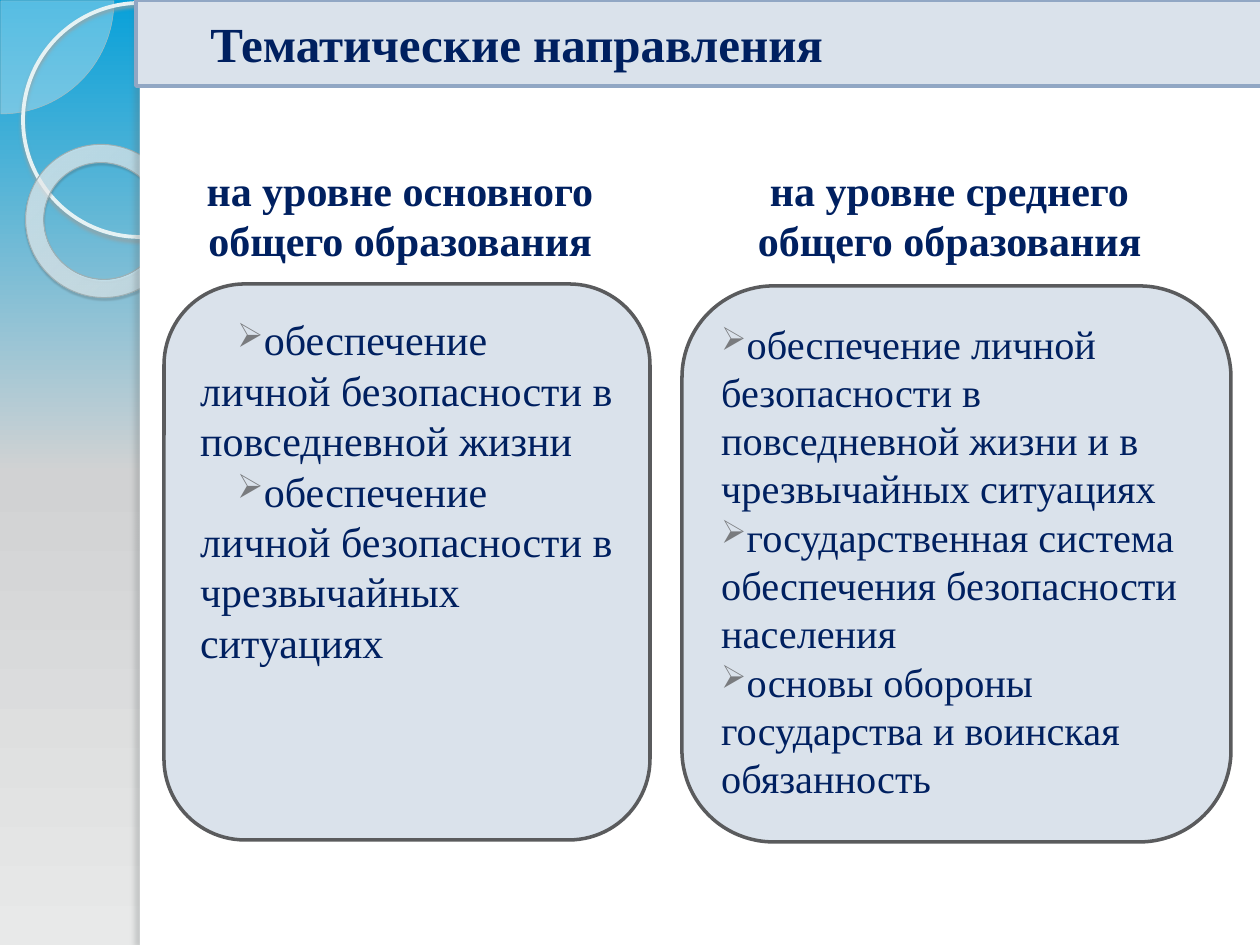
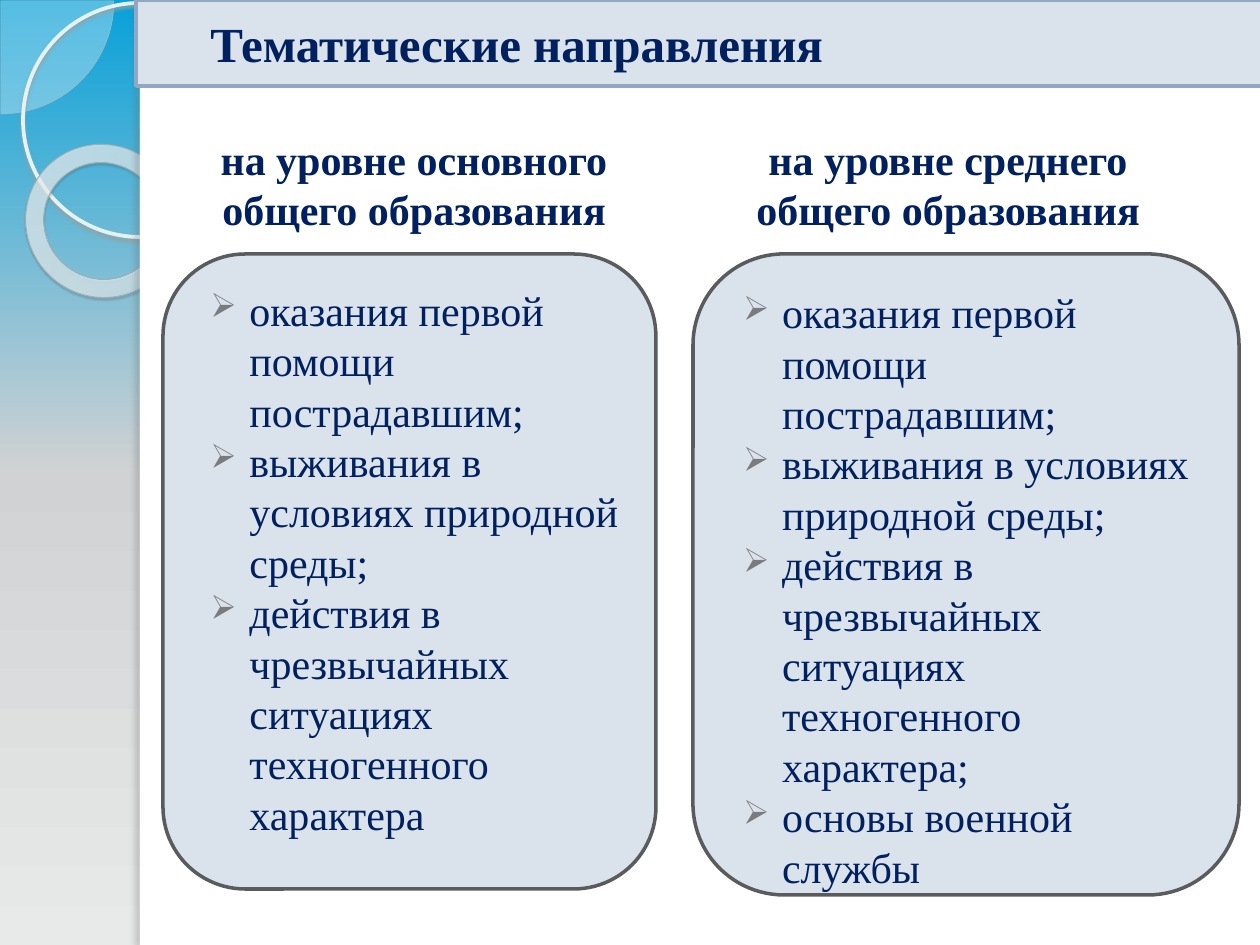
"""Build two slides on the thematic areas of safety teaching, by school level."""
from lxml.etree import SubElement
from pptx import Presentation
from pptx.dml.color import RGBColor
from pptx.enum.shapes import MSO_SHAPE as Preset
from pptx.enum.text import MSO_ANCHOR as Anchor, MSO_AUTO_SIZE as AutoSize, PP_ALIGN as Align
from pptx.oxml import parse_xml
from pptx.oxml.ns import nsdecls, qn
from pptx.util import Pt

PX = 914400 / 126
FONT = "Times New Roman"
COLOR = {
    "text": "002060", "panel": "DAE2EB", "outline": "5A5B5D", "bullet": "797B7E",
    "title_line": "91A7C4", "white": "FFFFFF", "pie": "F6F9FA", "pie_line": "AABCBF",
    "ring": "E5F2F4", "ring_shadow": "95A1A3", "donut_line": "9EB0B4",
    "donut_shadow": "495052", "edge_shadow": "666B6C",
}


def block(slide, preset, box, fill=None, line=None, width=1, alpha=None, shadow=None):
    shape = slide.shapes.add_shape(preset, *(round(v * PX) for v in box))
    shape.shadow.inherit = False
    if fill:
        shape.fill.solid()
        shape.fill.fore_color.rgb = RGBColor.from_string(COLOR[fill])
    else:
        shape.fill.background()
    if line:
        shape.line.color.rgb = RGBColor.from_string(COLOR[line])
        shape.line.width = Pt(width)
    else:
        shape.line.fill.background()
    properties = shape._element.spPr
    if alpha:
        tint = properties.find(qn("a:solidFill"))[0]
        SubElement(tint, qn("a:alpha"), val=str(alpha * 1000))
    if shadow:
        color, opacity, blur, distance, angle = shadow
        outer = SubElement(properties.find(qn("a:effectLst")), qn("a:outerShdw"),
                           blurRad=str(Pt(blur)), dist=str(Pt(distance)),
                           dir=str(angle * 60000), algn="ctr", rotWithShape="0")
        tint = SubElement(outer, qn("a:srgbClr"), val=COLOR[color])
        SubElement(tint, qn("a:alpha"), val=str(opacity * 1000))
    return shape


def write(shape, lines, size=24, bold=False, align=Align.LEFT, anchor=Anchor.TOP,
          margin=0, indent=0, bullet=None):
    frame = shape.text_frame
    frame.word_wrap = True
    frame.vertical_anchor = anchor
    for number, line in enumerate(lines):
        paragraph = frame.add_paragraph() if number else frame.paragraphs[0]
        paragraph.alignment = align
        run = paragraph.add_run()
        run.text = line
        run.font.name = FONT
        run.font.size = Pt(size)
        run.font.bold = bold
        run.font.color.rgb = RGBColor.from_string(COLOR["text"])
        layout = paragraph._p.get_or_add_pPr()
        layout.set("marL", str(round(margin * PX)))
        layout.set("indent", str(round(indent * PX)))
        if bullet:
            tint = SubElement(layout, qn("a:buClr"))
            SubElement(tint, qn("a:srgbClr"), val=COLOR["bullet"])
            SubElement(layout, qn("a:buSzPct"), val="80000")
            SubElement(layout, qn("a:buChar"), char=bullet)


gradients = {}
for part, stops, direction in (
    ("backdrop", ((0, "08A1D9", 100), (50, "D1D2D3", 100), (100, "E8E9E9", 100)),
     '<a:lin ang="5400000" scaled="0"/>'),
    ("donut", ((0, "F8FBFC", 70), (70, "FCFDFE", 55), (100, "A7C7CE", 60)),
     '<a:path path="circle"><a:fillToRect l="-408000" t="-50000" r="508000" b="150000"/></a:path>'),
):
    marks = "".join(
        f'<a:gs pos="{place * 1000}"><a:srgbClr val="{color}">'
        f'<a:alpha val="{opacity * 1000}"/></a:srgbClr></a:gs>'
        for place, color, opacity in stops)
    gradients[part] = (f'<a:gradFill {nsdecls("a")} rotWithShape="1">'
                       f"<a:gsLst>{marks}</a:gsLst>{direction}</a:gradFill>")

LEVELS = ("на уровне основного общего образования",
          "на уровне среднего общего образования")
SKILLS = ("оказания первой помощи пострадавшим;", "выживания в условиях природной среды;")
SLIDES = (
    (
        {"heading": (111, 158, 567, 115), "panel": (164, 284, 486, 556),
         "format": {"indent": 37},
         "topics": ("обеспечение личной безопасности в повседневной жизни",
                    "обеспечение личной безопасности в чрезвычайных ситуациях")},
        {"heading": (680, 158, 528, 115), "panel": (682, 286, 549, 556),
         "format": {"indent": -39, "size": 23},
         "topics": ("обеспечение личной безопасности в повседневной жизни и в чрезвычайных ситуациях",
                    "государственная система обеспечения безопасности населения",
                    "основы обороны государства и воинская обязанность")},
    ),
    (
        {"heading": (125, 127, 567, 115), "panel": (163, 254, 493, 635),
         "format": {"margin": 50, "indent": -39},
         "topics": (*SKILLS, "действия в чрезвычайных ситуациях техногенного характера")},
        {"heading": (679, 127, 527, 115), "panel": (693, 254, 546, 641),
         "format": {"margin": 50, "indent": -39},
         "topics": (*SKILLS, "действия в чрезвычайных ситуациях техногенного характера;",
                    "основы военной службы")},
    ),
)

deck = Presentation()
deck.slide_width = round(1260 * PX)
deck.slide_height = round(945 * PX)
master = deck.slide_master
master.background.fill.solid()
backdrop = master._element.find(".//" + qn("p:bgPr"))
backdrop.replace(backdrop.find(qn("a:solidFill")), parse_xml(gradients["backdrop"]))

for columns in SLIDES:
    slide = deck.slides.add_slide(deck.slide_layouts[6])

    pie = block(slide, Preset.PIE, (-112, -112, 226, 226), "pie", "pie_line", 0.25, alpha=33)
    pie.adjustments[0] = 0
    pie.adjustments[1] = 54.02
    block(slide, Preset.OVAL, (23, 3, 234, 234), line="ring", width=2.15,
          shadow=("ring_shadow", 85, 2, 2, 90))
    donut = block(slide, Preset.DONUT, (25, 145, 155, 152), line="donut_line", width=0.58,
                  shadow=("donut_shadow", 35, 1, 1.2, 75))
    donut.adjustments[0] = 0.12
    donut.rotation = 38.6
    surface = donut._element.spPr
    surface.replace(surface.find(qn("a:noFill")), parse_xml(gradients["donut"]))
    block(slide, Preset.RECTANGLE, (140, 0, 1120, 945), "white")
    block(slide, Preset.RECTANGLE, (140, 0, 10, 945), "white",
          shadow=("edge_shadow", 25, 3, 3, 180))

    for column in columns:
        panel = block(slide, Preset.ROUNDED_RECTANGLE, column["panel"], "panel", "outline", 2)
        write(panel, column["topics"], bullet="➢", **column["format"])

    for level, column in zip(LEVELS, columns):
        heading = slide.shapes.add_textbox(*(round(v * PX) for v in column["heading"]))
        write(heading, [level], bold=True, align=Align.CENTER, margin=11)
        heading.text_frame.auto_size = AutoSize.SHAPE_TO_FIT_TEXT

    title = block(slide, Preset.RECTANGLE, (136, 0, 1126, 86), "panel", "title_line", 2.25)
    write(title, ["Тематические направления"], size=28, bold=True,
          anchor=Anchor.MIDDLE, indent=62)

deck.save("out.pptx")
